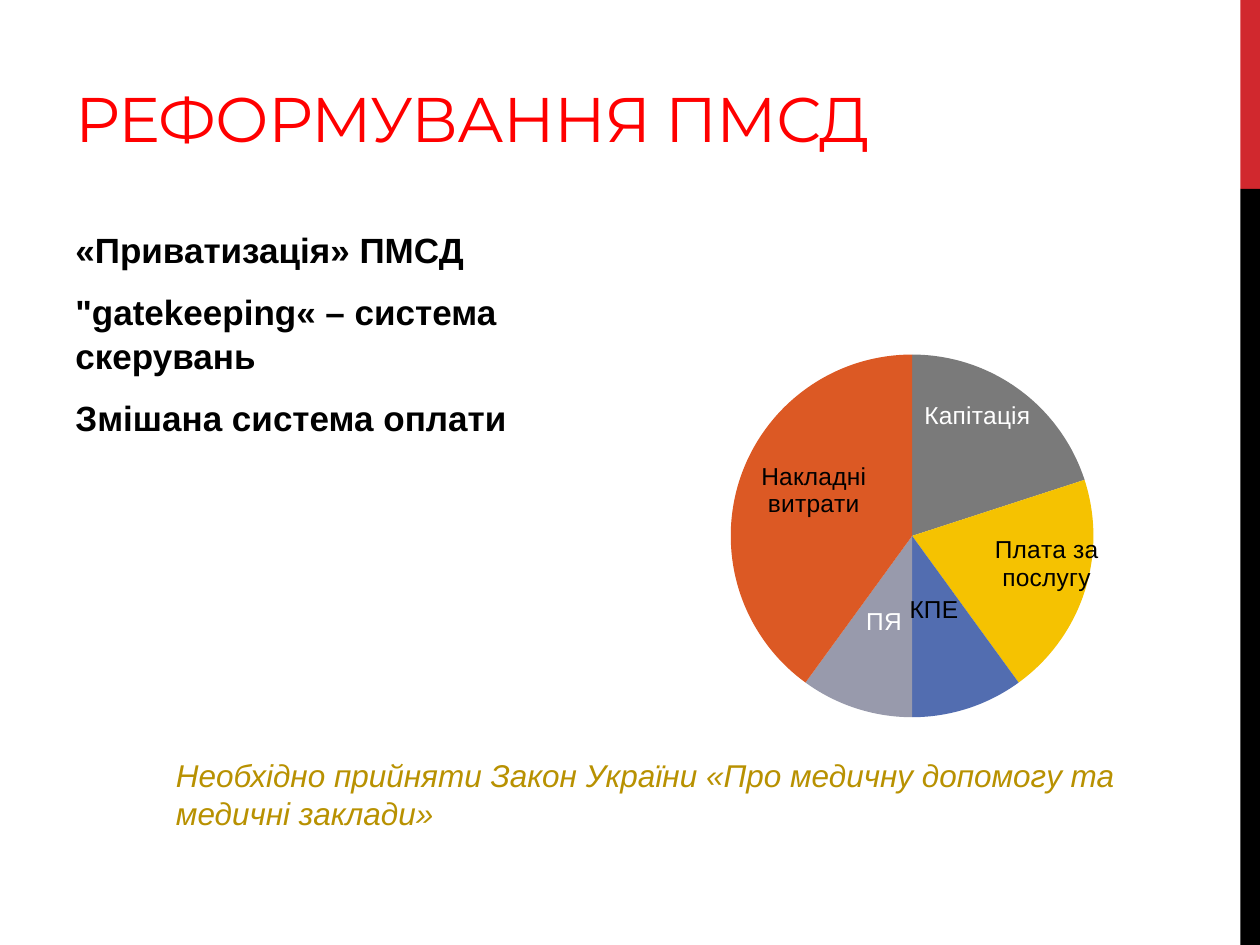
import lxml.etree
import pptx
import pptx.chart.data
import pptx.dml.color
import pptx.enum.chart
import pptx.enum.shapes
import pptx.enum.text
import pptx.oxml
import pptx.oxml.ns
import pptx.util

Pt = pptx.util.Pt
qn = pptx.oxml.ns.qn

COLORS = {
    "red": "D1282E", "black": "000000", "title": "FF0000", "gold": "B89101",
    "white": "FFFFFF", "gray": "7A7A7A", "yellow": "F5C201", "blue": "526DB0",
    "lilac": "989AAC", "orange": "DC5924",
}

# Category, value, slice colour, label colour, label shift as a share of the chart
PAYMENTS = [
    ("Капітація", 20, "gray", "white", (0.02, -0.08)),
    ("Плата за послугу", 20, "yellow", "black", (0.08, 0)),
    ("КПЕ", 10, "blue", "black", (-0.01, -0.02)),
    ("ПЯ", 10, "lilac", "white", (0, 0)),
    ("Накладні витрати", 40, "orange", "black", (-0.02, -0.03)),
]


def color(name):
    return pptx.dml.color.RGBColor.from_string(COLORS[name])


def manual_layout(**values):
    """Return a c:layout element holding the given children in order."""
    layout = lxml.etree.Element(qn("c:layout"))
    manual = lxml.etree.SubElement(layout, qn("c:manualLayout"))
    for tag, value in values.items():
        lxml.etree.SubElement(manual, qn("c:" + tag)).set("val", str(value))
    return layout


class SlideBuilder:
    font = "Arial"
    title_font = "Montserrat"

    def __init__(self, page):
        self.page = page

    def style(self, font, size, tint, name=None, bold=False, italic=False):
        font.name = name or self.font
        font.size = Pt(size)
        font.bold = bold
        font.italic = italic
        font.color.rgb = color(tint)

    def title(self, text, left, top, width, height):
        box = self.page.shapes.title
        box.left, box.top, box.width, box.height = map(Pt, (left, top, width, height))
        frame = box.text_frame
        frame.text = text
        frame.auto_size = pptx.enum.text.MSO_AUTO_SIZE.NONE
        frame.vertical_anchor = pptx.enum.text.MSO_ANCHOR.BOTTOM
        para = frame.paragraphs[0]
        para.alignment = pptx.enum.text.PP_ALIGN.LEFT
        self.style(para.font, 36, "title", self.title_font)
        para.runs[0]._r.get_or_add_rPr().set("spc", "-60")

    def bar(self, tint, left, top, width, height):
        box = self.page.shapes.add_shape(
            pptx.enum.shapes.MSO_SHAPE.RECTANGLE, *map(Pt, (left, top, width, height)))
        box.shadow.inherit = False
        box.fill.solid()
        box.fill.fore_color.rgb = color(tint)
        box.line.fill.background()

    def text(self, lines, left, top, width, height, size, tint,
             before=0, after=0, spacing=1.0, **emphasis):
        box = self.page.shapes.add_textbox(*map(Pt, (left, top, width, height)))
        frame = box.text_frame
        frame.word_wrap = True
        frame.text = "\n".join(lines)
        for para in frame.paragraphs:
            para.space_before, para.space_after = Pt(before), Pt(after)
            para.line_spacing = spacing
            self.style(para.font, size, tint, **emphasis)

    def pie(self, slices, left, top, width, height):
        data = pptx.chart.data.CategoryChartData()
        data.categories = [item[0] for item in slices]
        data.add_series("Series 1", [item[1] for item in slices])
        chart = self.page.shapes.add_chart(
            pptx.enum.chart.XL_CHART_TYPE.PIE,
            *map(Pt, (left, top, width, height)), data).chart
        chart.has_title = False
        chart.has_legend = False
        self.style(chart.font, 14, "black")
        plot = chart.plots[0]
        plot.vary_by_categories = True
        series = plot.series[0]
        labels = series.data_labels
        labels.show_value = False
        labels.show_category_name = True
        for index, (_, _, fill, ink, shift) in enumerate(slices):
            point = series.points[index]
            point.format.fill.solid()
            point.format.fill.fore_color.rgb = color(fill)
            point.format.line.fill.background()
            self.style(point.data_label.font, 14, ink)
            point.data_label.position = pptx.enum.chart.XL_LABEL_POSITION.CENTER
            label = labels._element.findall(qn("c:dLbl"))[index]
            label.find(qn("c:showVal")).set("val", "0")
            label.find(qn("c:showCatName")).set("val", "1")
            label.find(qn("c:idx")).addnext(manual_layout(x=shift[0], y=shift[1]))
        area = chart._chartSpace.find(".//" + qn("c:plotArea"))
        for old in area.findall(qn("c:layout")):
            area.remove(old)
        area.insert(0, manual_layout(
            layoutTarget="inner", xMode="edge", yMode="edge",
            x=0.2, y=0.17, w=0.6, h=0.62))


def main():
    deck = pptx.Presentation()
    deck.slide_width, deck.slide_height = Pt(720), Pt(540)
    slide = SlideBuilder(deck.slides.add_slide(deck.slide_layouts[5]))
    slide.bar("red", 708.75, 0, 11.25, 108)
    slide.bar("black", 708.75, 108, 11.25, 432)
    slide.title("РЕФОРМУВАННЯ ПМСД", 36, 15, 602, 77)
    slide.text(
        ["«Приватизація» ПМСД", "\"gatekeeping« – система скерувань",
         "Змішана система оплати"],
        36, 126, 330, 263, 20, "black", before=4, after=6, spacing=1.05, bold=True)
    slide.pie(PAYMENTS, 348.5, 145.5, 345.5, 335)
    slide.text(
        ["Необхідно прийняти Закон України «Про медичну допомогу та медичні заклади»"],
        93.5, 428.5, 584, 51, 18, "gold", italic=True)
    deck.save("out.pptx")


if __name__ == "__main__":
    main()
